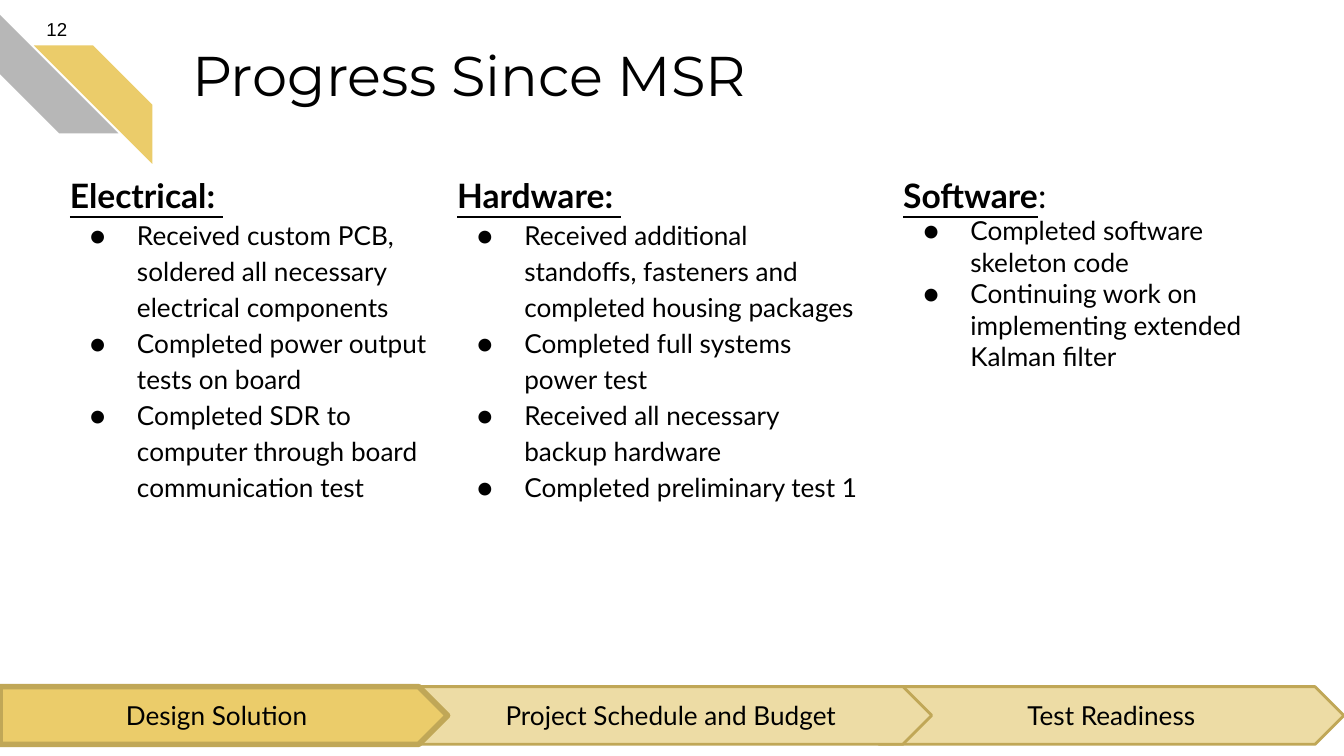
from dataclasses import dataclass

from lxml.etree import SubElement
from pptx import Presentation
from pptx.dml.color import RGBColor
from pptx.enum.shapes import MSO_SHAPE
from pptx.enum.text import MSO_ANCHOR, MSO_AUTO_SIZE, PP_ALIGN
from pptx.oxml.ns import qn
from pptx.shapes.autoshape import Shape
from pptx.slide import Slide
from pptx.text.text import Font, TextFrame
from pptx.util import Cm, Pt


@dataclass(frozen=True)
class Theme:
    ink: str = "000000"
    gray: str = "B7B7B7"
    gold: str = "EBCC6A"
    pale: str = "EDDCA5"
    edge: str = "C0A757"
    display: str = "Montserrat"
    body: str = "Lato"
    plain: str = "Arial"
    title: int = 30
    head: int = 18
    text: int = 14
    number: int = 10


@dataclass(frozen=True)
class Topic:
    left: float
    width: float
    head: str
    tail: str
    points: tuple[str, ...]
    spacing: float


@dataclass(frozen=True)
class Step:
    left: float
    width: float
    label: str
    active: bool = False


THEME = Theme()
TOPICS = (
    Topic(1.07, 7.7, "Electrical: ", "", (
        "Received custom PCB, soldered all necessary electrical components",
        "Completed power output tests on board",
        "Completed SDR to computer through board communication test",
    ), 1.15),
    Topic(8.39, 8.18, "Hardware: ", "", (
        "Received additional standoffs, fasteners and completed housing packages",
        "Completed full systems power test",
        "Received all necessary backup hardware",
        "Completed preliminary test 1",
    ), 1.15),
    Topic(16.82, 7.47, "Software", ":", (
        "Completed software skeleton code",
        "Continuing work on implementing extended Kalman filter",
    ), 1.0),
)
# Later steps lie behind earlier ones.
STEPS = (
    Step(16.61, 8.79, "Test Readiness"),
    Step(7.75, 9.86, "Project Schedule and Budget"),
    Step(0, 8.46, "Design Solution", active=True),
)


def style(font: Font, face: str, size: int) -> None:
    font.name = face
    font.size = Pt(size)
    font.color.rgb = RGBColor.from_string(THEME.ink)


def setup(frame: TextFrame, anchor: MSO_ANCHOR = MSO_ANCHOR.TOP) -> None:
    """Give a frame wrapping, equal margins and a fixed size."""
    frame.word_wrap = True
    frame.auto_size = MSO_AUTO_SIZE.NONE
    frame.vertical_anchor = anchor
    frame.margin_left = frame.margin_right = Cm(0.25)
    frame.margin_top = frame.margin_bottom = Cm(0.25)


def write(frame: TextFrame, text: str, face: str, size: int,
          align: PP_ALIGN, anchor: MSO_ANCHOR) -> None:
    """Fill a frame with one styled line."""
    setup(frame, anchor)
    frame.text = text
    line = frame.paragraphs[0]
    line.alignment = align
    style(line.runs[0].font, face, size)


def paint(shape: Shape, color: str) -> None:
    shape.shadow.inherit = False
    shape.fill.solid()
    shape.fill.fore_color.rgb = RGBColor.from_string(color)


def add_stripe(slide: Slide, left: float, top: float, color: str) -> Shape:
    shape = slide.shapes.add_shape(
        MSO_SHAPE.DIAGONAL_STRIPE, Cm(left), Cm(top), Cm(2.24), Cm(2.24))
    paint(shape, color)
    shape.line.fill.background()
    return shape


def add_step(slide: Slide, step: Step) -> None:
    kind = MSO_SHAPE.PENTAGON if step.active else MSO_SHAPE.CHEVRON
    shape = slide.shapes.add_shape(
        kind, Cm(step.left), Cm(12.98), Cm(step.width), Cm(1.09))
    paint(shape, THEME.gold if step.active else THEME.pale)
    shape.line.color.rgb = RGBColor.from_string(THEME.edge)
    shape.line.width = Pt(3 if step.active else 1.5)
    write(shape.text_frame, step.label, THEME.body, THEME.text,
          PP_ALIGN.CENTER, MSO_ANCHOR.MIDDLE)


def add_topic(slide: Slide, topic: Topic) -> None:
    box = slide.shapes.add_textbox(
        Cm(topic.left), Cm(3.05), Cm(topic.width), Cm(8.59))
    frame = box.text_frame
    setup(frame)
    head = frame.paragraphs[0]
    head.text = topic.head
    style(head.runs[0].font, THEME.body, THEME.head)
    head.runs[0].font.bold = head.runs[0].font.underline = True
    if topic.tail:
        tail = head.add_run()
        tail.text = topic.tail
        style(tail.font, THEME.body, THEME.head)
    for point in topic.points:
        line = frame.add_paragraph()
        line.text = point
        props = line._p.get_or_add_pPr()
        props.set("marL", str(Cm(1.27)))
        props.set("indent", str(-Cm(0.89)))
        tint = SubElement(props, qn("a:buClr"))
        SubElement(tint, qn("a:srgbClr"), val=THEME.ink)
        SubElement(props, qn("a:buFont"), typeface=THEME.body)
        SubElement(props, qn("a:buChar"), char="●")
        line.line_spacing = topic.spacing
        style(line.runs[0].font, THEME.body, THEME.text)


def main() -> None:
    deck = Presentation()
    deck.slide_width, deck.slide_height = Cm(25.4), Cm(14.29)
    slide = deck.slides.add_slide(deck.slide_layouts[5])

    add_stripe(slide, 0, 0.28, THEME.gray).rotation = 270
    gold = add_stripe(slide, 0.64, 0.86, THEME.gold)
    gold._element.spPr.xfrm.set("flipH", "1")

    title = slide.shapes.title
    title.left, title.top = Cm(3.38), Cm(0.51)
    title.width, title.height = Cm(19.56), Cm(2.54)
    write(title.text_frame, "Progress Since MSR", THEME.display, THEME.title,
          PP_ALIGN.LEFT, MSO_ANCHOR.TOP)

    number = slide.shapes.add_textbox(0, 0, Cm(1.52), Cm(1.09))
    write(number.text_frame, "12", THEME.plain, THEME.number,
          PP_ALIGN.RIGHT, MSO_ANCHOR.MIDDLE)

    for step in STEPS:
        add_step(slide, step)
    for topic in TOPICS:
        add_topic(slide, topic)
    deck.save("out.pptx")


if __name__ == "__main__":
    main()
